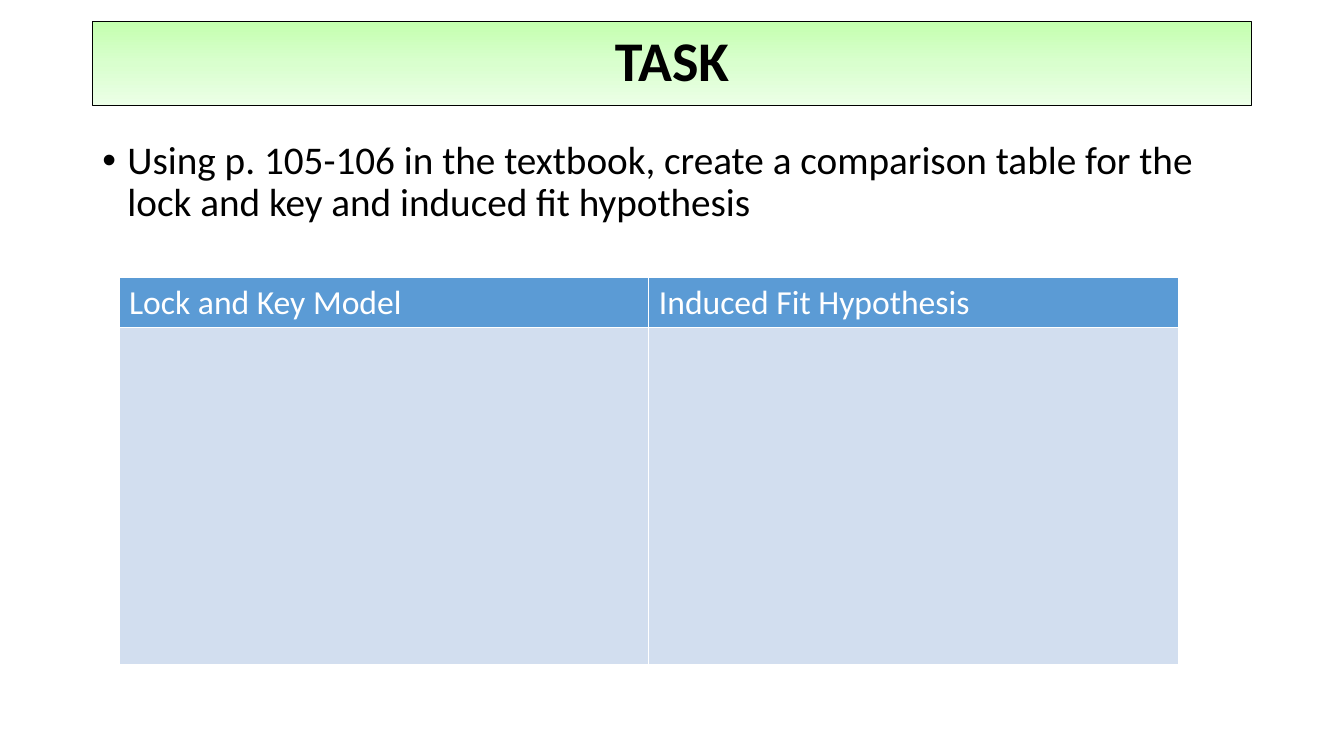
from copy import deepcopy
from lxml import etree
from pptx import Presentation
from pptx import util as u
from pptx.dml.color import RGBColor
from pptx.enum import shapes, text
from pptx.oxml import ns

TITLE = "TASK"
TASK = ("Using p. 105-106 in the textbook, create a comparison table for the "
        "lock and key and induced fit hypothesis")
ROWS = [("Lock and Key Model", "Induced Fit Hypothesis"), ("", "")]
THEME = {
    "font": "Calibri", "title": 40, "body": 28, "cell": 24,
    "ink": "000000", "white": "FFFFFF",
    "grad": ["C4FFAF", "D9FFCE", "ECFFE7"],
    "rows": ["5B9BD5", "D2DEEF"],
}
WIDE, HIGH = 960, 540
SIDE, SPAN = 66, 828
BAR = (SIDE, 15.25, SPAN, 60.5)
BODY = (SIDE, 97, SPAN, 389.5)
GRID = (85, 198, 757)
TALL = [36, 241]


def box(*nums):
    return [u.Pt(n) for n in nums]


def color(key):
    return RGBColor.from_string(key)


def style(para, size, ink, bold=False):
    font = para.font
    font.name = THEME["font"]
    font.size = u.Pt(THEME[size])
    font.bold = bold
    font.color.rgb = color(THEME[ink])


def shade(fill, hues):
    fill.gradient()
    fill.gradient_angle = 270
    first = fill.gradient_stops[0]
    first.color.rgb = color(hues[0])
    fill.gradient_stops[1].color.rgb = color(hues[-1])
    node = bar._element.spPr.find(".//" + ns.qn("a:gs"))
    mid = deepcopy(node)
    node.addnext(mid)
    stop = fill.gradient_stops[1]
    stop.position = 0.5
    stop.color.rgb = color(hues[1])


def border(cell):
    props = cell._tc.get_or_add_tcPr()
    for spot, side in enumerate(("lnL", "lnR", "lnT", "lnB")):
        line = etree.Element(ns.qn("a:" + side), w=str(u.Pt(1)))
        fill = etree.SubElement(line, ns.qn("a:solidFill"))
        etree.SubElement(fill, ns.qn("a:srgbClr"), val=THEME["white"])
        props.insert(spot, line)


deck = Presentation()
deck.slide_width, deck.slide_height = box(WIDE, HIGH)
slide = deck.slides.add_slide(deck.slide_layouts[6])

frame = slide.shapes.add_textbox(*box(*BODY)).text_frame
frame.word_wrap = True
para = frame.paragraphs[0]
para.text = TASK
para.line_spacing = 0.9
para.space_before = u.Pt(10)
props = para._p.get_or_add_pPr()
props.set("marL", str(u.Pt(18)))
props.set("indent", str(u.Pt(-18)))
etree.SubElement(props, ns.qn("a:buFont"), typeface="Arial")
etree.SubElement(props, ns.qn("a:buChar"), char="•")
style(para, "body", "ink")

bar = slide.shapes.add_shape(shapes.MSO_SHAPE.RECTANGLE, *box(*BAR))
bar.shadow.inherit = False
shade(bar.fill, THEME["grad"])
bar.line.color.rgb = color(THEME["ink"])
bar.line.width = u.Pt(0.75)
bar.text_frame.vertical_anchor = text.MSO_ANCHOR.MIDDLE
para = bar.text_frame.paragraphs[0]
para.text = TITLE
para.alignment = text.PP_ALIGN.CENTER
para.line_spacing = 0.9
style(para, "title", "ink", True)

table = slide.shapes.add_table(
    len(ROWS), len(ROWS[0]), *box(*GRID, sum(TALL))).table
table.first_row = False
table.horz_banding = False
for r, row in enumerate(ROWS):
    table.rows[r].height = u.Pt(TALL[r])
    for c, words in enumerate(row):
        cell = table.cell(r, c)
        cell.fill.solid()
        cell.fill.fore_color.rgb = color(THEME["rows"][r])
        border(cell)
        if words:
            para = cell.text_frame.paragraphs[0]
            para.text = words
            style(para, "cell", "white")

deck.save("out.pptx")
